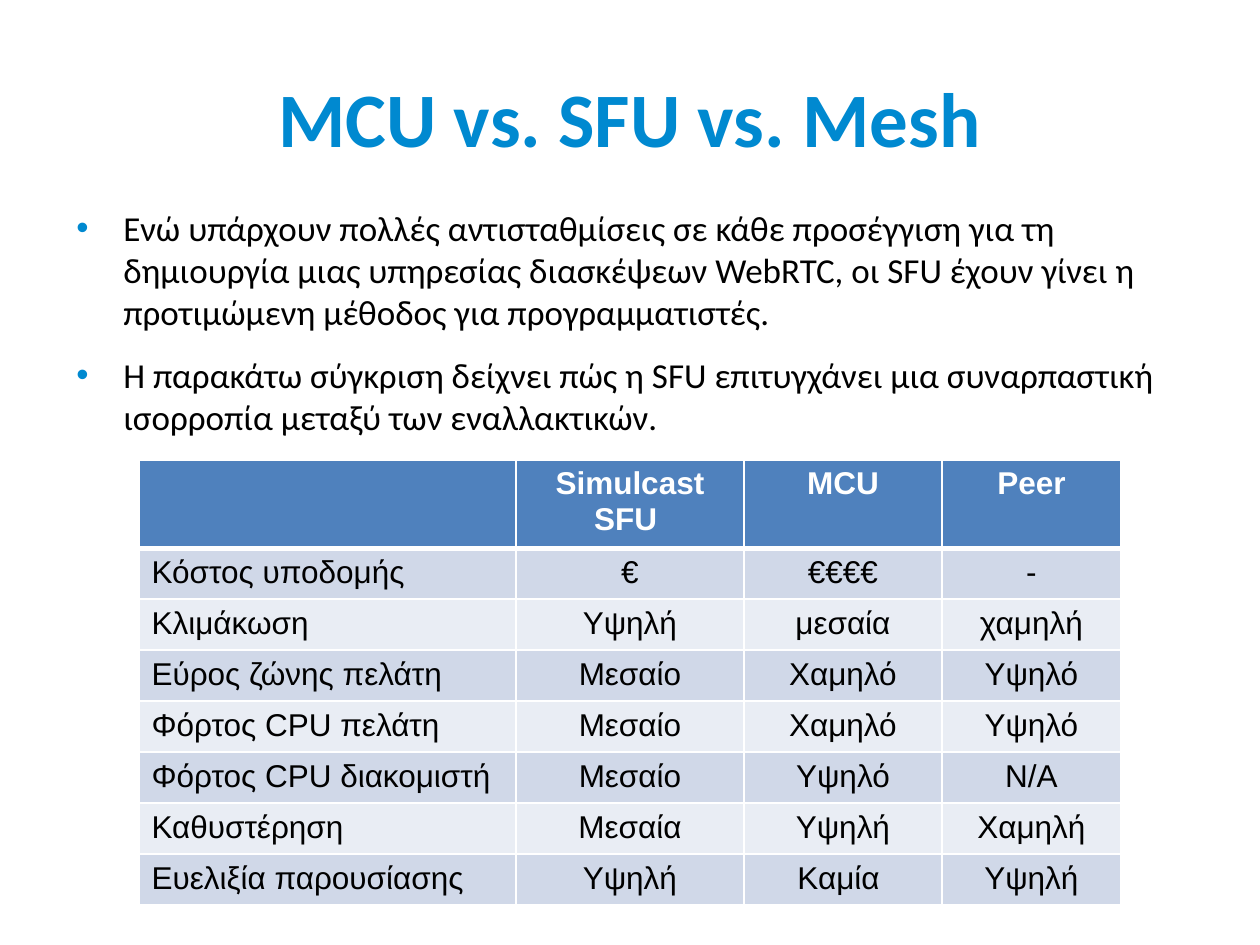
from lxml import etree
from pptx import Presentation
from pptx.dml.color import RGBColor
from pptx.enum.text import MSO_ANCHOR, PP_ALIGN
from pptx.oxml.ns import qn
from pptx.util import Pt

PX = 914400 / 126
ACCENT = RGBColor(0x00, 0x89, 0xD0)
BLACK = RGBColor(0x00, 0x00, 0x00)
WHITE = RGBColor(0xFF, 0xFF, 0xFF)
HEADER = RGBColor(0x4F, 0x81, 0xBD)
BAND_DARK = RGBColor(0xD0, 0xD8, 0xE8)
BAND_LIGHT = RGBColor(0xE9, 0xED, 0xF4)
LEFT, CENTER = PP_ALIGN.LEFT, PP_ALIGN.CENTER
MIDDLE, TOP = MSO_ANCHOR.MIDDLE, MSO_ANCHOR.TOP

TITLE = "MCU vs. SFU vs. Mesh"
POINTS = [
    "Ενώ υπάρχουν πολλές αντισταθμίσεις σε κάθε προσέγγιση για τη δημιουργία μιας "
    "υπηρεσίας διασκέψεων WebRTC, οι SFU έχουν γίνει η προτιμώμενη μέθοδος για "
    "προγραμματιστές.",
    "Η παρακάτω σύγκριση δείχνει πώς η SFU επιτυγχάνει μια συναρπαστική ισορροπία "
    "μεταξύ των εναλλακτικών.",
]
COLUMNS = [377, 228, 198, 179]
ROW_HEIGHT = 51
COMPARISON = [
    ["", "Simulcast SFU ", "MCU", "Peer"],
    ["Κόστος υποδομής", "€", "€€€€", "-"],
    ["Κλιμάκωση", "Υψηλή", "μεσαία", " χαμηλή "],
    ["Εύρος ζώνης πελάτη", "Μεσαίο", "Χαμηλό", "Υψηλό"],
    ["Φόρτος CPU πελάτη", "Μεσαίο", "Χαμηλό", "Υψηλό"],
    ["Φόρτος CPU διακομιστή", "Μεσαίο", "Υψηλό", "Ν/Α"],
    ["Καθυστέρηση", "Μεσαία", "Υψηλή", "Χαμηλή"],
    ["Ευελιξία παρουσίασης", "Υψηλή", "Καμία ", "Υψηλή"],
]


def px(n):
    """Convert pixels to EMU."""
    return round(n * PX)


class Deck:
    """Holds the fonts and the current slide, and draws its elements."""

    text_font = "Calibri"
    table_font = "Arial"

    def __init__(self, width, height):
        """Start a presentation with one blank slide."""
        self.prs = Presentation()
        self.prs.slide_width, self.prs.slide_height = px(width), px(height)
        self.s = self.prs.slides.add_slide(self.prs.slide_layouts[6])

    def run(self, p, text, size, color, font, bold=False):
        """Add one styled run to a paragraph."""
        r = p.add_run()
        r.text = text
        r.font.name, r.font.size, r.font.bold = font, Pt(size), bold
        r.font.color.rgb = color

    def frame(self, x, y, w, h, anchor):
        """Add a wrapping text box and return its text frame."""
        tf = self.s.shapes.add_textbox(px(x), px(y), px(w), px(h)).text_frame
        tf.word_wrap = True
        tf.vertical_anchor = anchor
        return tf

    def title(self, text, x, y, w, h):
        """Add the centred slide title."""
        p = self.frame(x, y, w, h, MIDDLE).paragraphs[0]
        p.alignment = CENTER
        self.run(p, text, 44, ACCENT, self.text_font, True)

    def bullets(self, items, x, y, w, h):
        """Add a bulleted list."""
        tf = self.frame(x, y, w, h, TOP)
        for i, item in enumerate(items):
            p = tf.add_paragraph() if i else tf.paragraphs[0]
            p.space_before = Pt(12)
            self.run(p, item, 20, BLACK, self.text_font)
            pPr = p._p.get_or_add_pPr()
            pPr.set("marL", str(px(47)))
            pPr.set("indent", str(-px(47)))
            color = etree.SubElement(pPr, qn("a:buClr"))
            etree.SubElement(color, qn("a:srgbClr"), val=str(ACCENT))
            etree.SubElement(pPr, qn("a:buFont"), typeface="Arial")
            etree.SubElement(pPr, qn("a:buChar"), char="•")

    def borders(self, cell, bottom):
        """Give a cell white borders, with its own bottom width."""
        tcPr = cell._tc.get_or_add_tcPr()
        for side, width in (("L", 1), ("R", 1), ("T", 1), ("B", bottom)):
            ln = etree.SubElement(tcPr, qn(f"a:ln{side}"), w=str(Pt(width)))
            fill = etree.SubElement(ln, qn("a:solidFill"))
            etree.SubElement(fill, qn("a:srgbClr"), val=str(WHITE))

    def cell(self, cell, text, row, col):
        """Fill one table cell by its row and column."""
        head = row == 0
        self.borders(cell, 3 if row < 1 else 1)
        cell.fill.solid()
        band = BAND_DARK if row % 2 else BAND_LIGHT
        cell.fill.fore_color.rgb = HEADER if head else band
        p = cell.text_frame.paragraphs[0]
        p.alignment = CENTER if col else LEFT
        if text:
            self.run(p, text, 18, WHITE if head else BLACK, self.table_font, head)

    def table(self, rows, x, y, widths, row_height):
        """Add a banded table with a header row."""
        shape = self.s.shapes.add_table(
            len(rows), len(widths), px(x), px(y),
            px(sum(widths)), px(row_height * len(rows)))
        for column, width in zip(shape.table.columns, widths):
            column.width = px(width)
        for i, row in enumerate(rows):
            shape.table.rows[i].height = px(row_height)
            for j, text in enumerate(row):
                self.cell(shape.table.cell(i, j), text, i, j)


def main():
    """Build the slide and save it."""
    deck = Deck(1260, 945)
    deck.title(TITLE, 63, 38, 1134, 158)
    deck.bullets(POINTS, 64, 200, 1134, 585)
    deck.table(COMPARISON, 139, 460, COLUMNS, ROW_HEIGHT)
    deck.prs.save("out.pptx")


if __name__ == "__main__":
    main()
